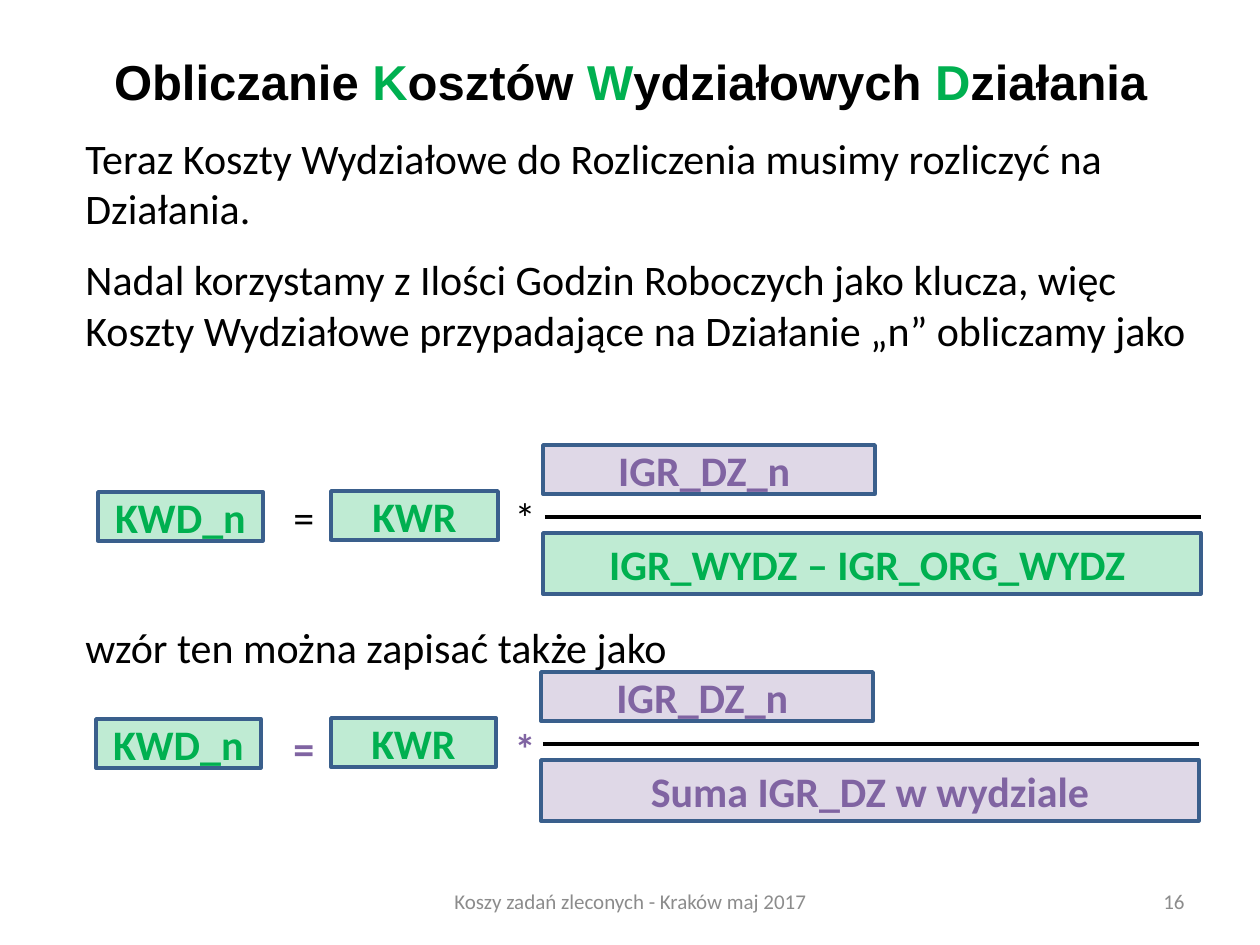
"""Build the slide on sharing department costs among activities."""
from lxml import etree
from pptx import Presentation
from pptx.dml.color import RGBColor
from pptx.enum.shapes import MSO_CONNECTOR, MSO_SHAPE
from pptx.enum.text import MSO_ANCHOR, MSO_AUTO_SIZE, PP_ALIGN
from pptx.oxml.ns import qn
from pptx.util import Pt

LEFT, MID, RIGHT = PP_ALIGN.LEFT, PP_ALIGN.CENTER, PP_ALIGN.RIGHT
TOP, CENTER = MSO_ANCHOR.TOP, MSO_ANCHOR.MIDDLE
NOFIT = MSO_AUTO_SIZE.NONE
RECT, LINE = MSO_SHAPE.RECTANGLE, MSO_CONNECTOR.STRAIGHT
BLACK, GREEN, PURPLE = "000000", "00B050", "8064A2"
BLUE, GRAY = "3A5F8C", "8C8C8C"
hue = RGBColor.from_string


def px(*nums):
    return [round(n * 914400 / 126) for n in nums]


def write(shape, *paras, size=24, font="Calibri", color=BLACK, bold=False,
          align=LEFT, anchor=TOP, gap=0):
    frame = shape.text_frame
    frame.word_wrap = True
    frame.auto_size = NOFIT
    frame.vertical_anchor = anchor
    for i, runs in enumerate(paras):
        para = frame.add_paragraph() if i else frame.paragraphs[0]
        para.alignment = align
        para.space_before = Pt(gap if i else 0)
        for part in [(runs, color)] if isinstance(runs, str) else runs:
            run = para.add_run()
            run.text = part[0]
            run.font.size = Pt(size)
            run.font.name = font
            run.font.bold = bold
            run.font.color.rgb = hue(part[1])


deck = Presentation()
deck.slide_width, deck.slide_height = px(1260, 945)
slide = deck.slides.add_slide(deck.slide_layouts[5])
shapes = slide.shapes

title = shapes.title
title.left, title.top, title.width, title.height = px(15, 45, 1245, 72)
write(title, [("Obliczanie ", BLACK), ("K", GREEN), ("osztów ", BLACK),
              ("W", GREEN), ("ydziałowych ", BLACK), ("D", GREEN),
              ("ziałania ", BLACK)],
      size=28, font="Arial", bold=True, align=MID)

intro = shapes.add_textbox(*px(73, 126, 1129, 240))
write(intro,
      "Teraz Koszty Wydziałowe do Rozliczenia musimy rozliczyć na Działania.",
      "Nadal korzystamy z Ilości Godzin Roboczych jako klucza, więc Koszty "
      "Wydziałowe przypadające na Działanie „n” obliczamy jako",
      gap=12)
also = shapes.add_textbox(*px(73, 615, 1129, 63))
write(also, "wzór ten można zapisać także jako")

rows = [
    (543, 445, 485, "IGR_WYDZ – IGR_ORG_WYDZ ", GREEN, BLACK, False),
    (541, 672, 716, "Suma IGR_DZ w wydziale", PURPLE, PURPLE, True),
]
for x, y, base, sum_text, tone, ink, bold in rows:
    for mark, mid in (("=", 304), ("*", 525)):
        sign = shapes.add_textbox(*px(mid - 30, base, 60, 63))
        write(sign, mark, color=ink, bold=bold, align=MID)

    boxes = [
        (x, y, 332, 49, "IGR_DZ_n ", PURPLE),
        (331, y + 46, x - 376, 49, "KWR", GREEN),
        (x, y + 88, 658, 61, sum_text, tone),
        (x - 445, y + 47, 165, 49, "KWD_n", GREEN),
    ]
    for left, top, wide, high, text, color in boxes:
        box = shapes.add_shape(RECT, *px(left, top, wide, high))
        box.shadow.inherit = False
        box.fill.solid()
        box.fill.fore_color.rgb = hue(color)
        tint = box.fill._xPr.find(qn("a:solidFill"))[0]
        etree.SubElement(tint, qn("a:alpha")).set("val", "25000")
        box.line.color.rgb = hue(BLUE)
        box.line.width = Pt(2)
        write(box, text, color=color, bold=True, align=MID, anchor=CENTER)

    bar = shapes.add_connector(LINE, *px(x + 2, y + 72, x + 658, y + 72))
    bar.line.color.rgb = hue(BLACK)
    bar.line.width = Pt(1.75)
    etree.SubElement(bar._element.spPr, qn("a:effectLst"))

for left, wide, text, align in (
        (431, 399, "Koszy zadań zleconych - Kraków maj 2017", MID),
        (903, 294, "16", RIGHT)):
    foot = shapes.add_textbox(*px(left, 876, wide, 50))
    write(foot, text, size=12, color=GRAY, align=align, anchor=CENTER)

deck.save("out.pptx")
